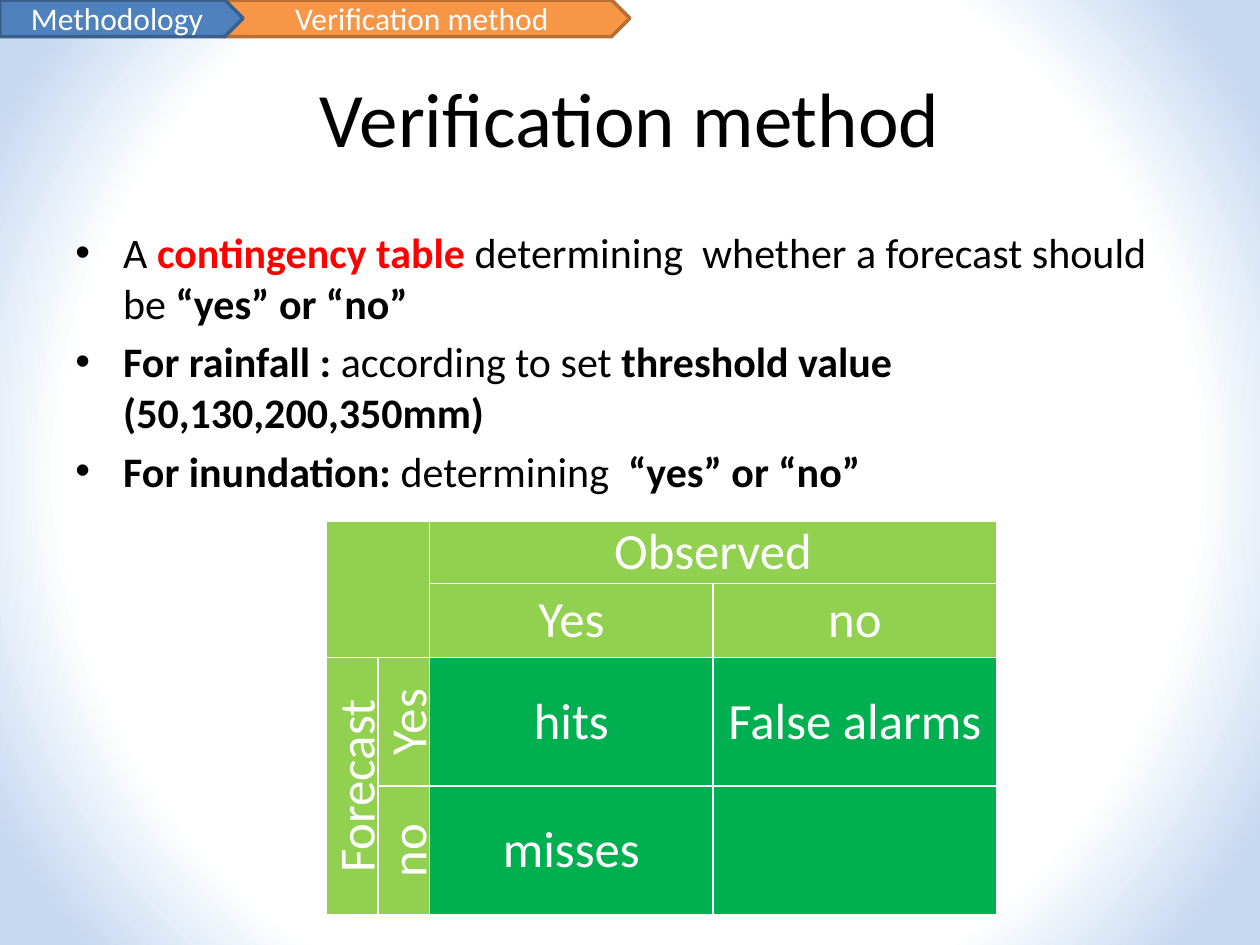
"""Build the verification method slide with its contingency table."""
from pptx import Presentation, oxml, util as u
from pptx.dml.color import RGBColor
from pptx.enum import shapes, text
from pptx.oxml.ns import nsdecls, qn

THEME = dict(
    font="Calibri", black="000000", white="FFFFFF", accent="FF0000",
    edge="C6D9F1", header="92D050", result="00B050",
    title=44, body=24, tab=18, cell=29,
)
WIDTH, HEIGHT = 10, 7.5
TITLE = "Verification method"
TITLE_AREA = (0.05, 0.04, 0.9, 1 / 6)
BODY_AREA = (0.05, 0.7 / 3, 0.9, 0.66)
TAB_HEIGHT, INDENT = 0.29, 0.38
TABS = [
    ("Verification method", 1.77, 3.23, "F79646", "B76F34"),
    ("Methodology", 0, 1.93, "4F81BD", "3A5F8C"),
]
BULLETS = [
    [("A ", ""), ("contingency table ", "accent"),
     ("determining  whether a forecast should be ", ""), ("“yes” or “no”", "bold")],
    [("For rainfall : ", "bold"), ("according to set ", ""),
     ("threshold value (50,130,200,350mm)", "bold")],
    [("For inundation: ", "bold"), ("determining  ", ""), ("“yes” or “no”", "bold")],
]
TABLE_ORIGIN = (2.59, 4.14)
COLUMNS = [0.41, 0.41, 2.25, 2.25]
ROWS = [0.49, 0.59, 1.02, 1.02]
HEADERS = 2
CELLS = [
    ["", "", "Observed", ""],
    ["", "", "Yes", "no"],
    ["Forecast", "Yes", "hits", "False alarms"],
    ["", "no", "misses", ""],
]
MERGES = [((0, 0), (1, 1)), ((0, 2), (0, 3)), ((2, 0), (3, 0))]


def apply(target, **values):
    for name, value in values.items():
        setattr(target, name, value)


def color(value):
    return RGBColor.from_string(value)


def add_span(para, words, size, tint, bold=False):
    span = para.add_run()
    span.text = words
    apply(span.font, name=THEME["font"], size=u.Pt(size), bold=bold)
    span.font.color.rgb = color(tint)


def add_box(page, area):
    left, top, width, height = area
    box = page.shapes.add_textbox(
        u.Inches(left * WIDTH), u.Inches(top * HEIGHT),
        u.Inches(width * WIDTH), u.Inches(height * HEIGHT))
    box.text_frame.word_wrap = True
    return box.text_frame


def paint_background(page):
    page.background.fill.solid()
    holder = page.element.find(".//" + qn("p:bgPr"))
    stops = [(0, "white"), (72, "white"), (92, "edge")]
    marks = "".join(
        f'<a:gs pos="{share * 1000}"><a:srgbClr val="{THEME[name]}"/></a:gs>'
        for share, name in stops)
    holder.replace(holder[0], oxml.parse_xml(
        f'<a:gradFill {nsdecls("a")} rotWithShape="1"><a:gsLst>{marks}</a:gsLst>'
        '<a:path path="circle"><a:fillToRect l="50000" t="50000" r="50000" b="50000"/>'
        '</a:path></a:gradFill>'))


def add_title(page):
    frame = add_box(page, TITLE_AREA)
    frame.vertical_anchor = text.MSO_ANCHOR.MIDDLE
    para = frame.paragraphs[0]
    para.alignment = text.PP_ALIGN.CENTER
    add_span(para, TITLE, THEME["title"], THEME["black"])


def add_bullets(page):
    frame = add_box(page, BODY_AREA)
    for index, spans in enumerate(BULLETS):
        para = frame.add_paragraph() if index else frame.paragraphs[0]
        para.space_before = u.Pt(THEME["body"] * 0.2)
        layout = para._p.get_or_add_pPr()
        layout.set("marL", str(u.Inches(INDENT)))
        layout.set("indent", str(-u.Inches(INDENT)))
        layout.append(oxml.parse_xml(f'<a:buFont {nsdecls("a")} typeface="Arial"/>'))
        layout.append(oxml.parse_xml(f'<a:buChar {nsdecls("a")} char="•"/>'))
        for words, style in spans:
            tint = THEME["accent" if style == "accent" else "black"]
            add_span(para, words, THEME["body"], tint, bool(style))


def add_tabs(page):
    for label, left, width, fill, line in TABS:
        tab = page.shapes.add_shape(
            shapes.MSO_SHAPE.PENTAGON, u.Inches(left), 0,
            u.Inches(width), u.Inches(TAB_HEIGHT))
        tab.shadow.inherit = False
        tab.fill.solid()
        tab.fill.fore_color.rgb = color(fill)
        tab.line.color.rgb = color(line)
        tab.line.width = u.Pt(2)
        apply(tab.text_frame, vertical_anchor=text.MSO_ANCHOR.MIDDLE, word_wrap=True)
        para = tab.text_frame.paragraphs[0]
        para.alignment = text.PP_ALIGN.CENTER
        add_span(para, label, THEME["tab"], THEME["white"])


def format_cell(cell, words, is_header, is_vertical):
    apply(cell, vertical_anchor=text.MSO_ANCHOR.MIDDLE, margin_left=0,
          margin_right=0, margin_top=0, margin_bottom=0)
    cell.fill.solid()
    cell.fill.fore_color.rgb = color(THEME["header" if is_header else "result"])
    layout = cell._tc.get_or_add_tcPr()
    for index, side in enumerate("LRTB"):
        layout.insert(index, oxml.parse_xml(
            f'<a:ln{side} {nsdecls("a")} w="{u.Pt(1)}"><a:solidFill>'
            f'<a:srgbClr val="{THEME["white"]}"/></a:solidFill></a:ln{side}>'))
    if is_vertical:
        layout.set("vert", "vert270")
    if words:
        para = cell.text_frame.paragraphs[0]
        para.alignment = text.PP_ALIGN.CENTER
        add_span(para, words, THEME["cell"], THEME["white"])


def add_contingency_table(page):
    left, top = TABLE_ORIGIN
    table = page.shapes.add_table(
        len(ROWS), len(COLUMNS), u.Inches(left), u.Inches(top),
        u.Inches(sum(COLUMNS)), u.Inches(sum(ROWS))).table
    apply(table, first_row=False, horz_banding=False)
    for column, width in zip(table.columns, COLUMNS):
        column.width = u.Inches(width)
    for row, height in zip(table.rows, ROWS):
        row.height = u.Inches(height)
    for first, last in MERGES:
        table.cell(*first).merge(table.cell(*last))
    for r, labels in enumerate(CELLS):
        for c, words in enumerate(labels):
            format_cell(table.cell(r, c), words, min(r, c) < HEADERS,
                        r >= HEADERS > c)


def main():
    deck = Presentation()
    apply(deck, slide_width=u.Inches(WIDTH), slide_height=u.Inches(HEIGHT))
    page = deck.slides.add_slide(deck.slide_layouts[6])
    paint_background(page)
    add_title(page)
    add_bullets(page)
    add_tabs(page)
    add_contingency_table(page)
    deck.save("out.pptx")


if __name__ == "__main__":
    main()
